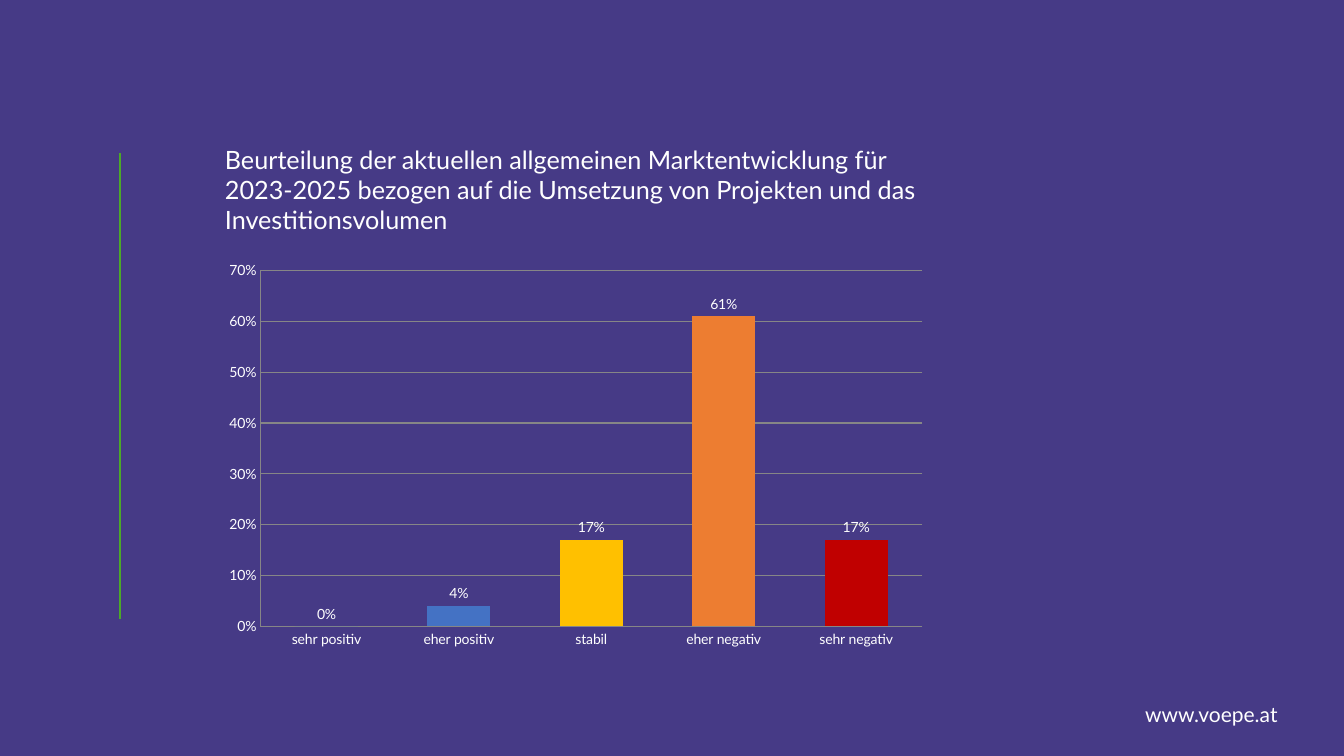
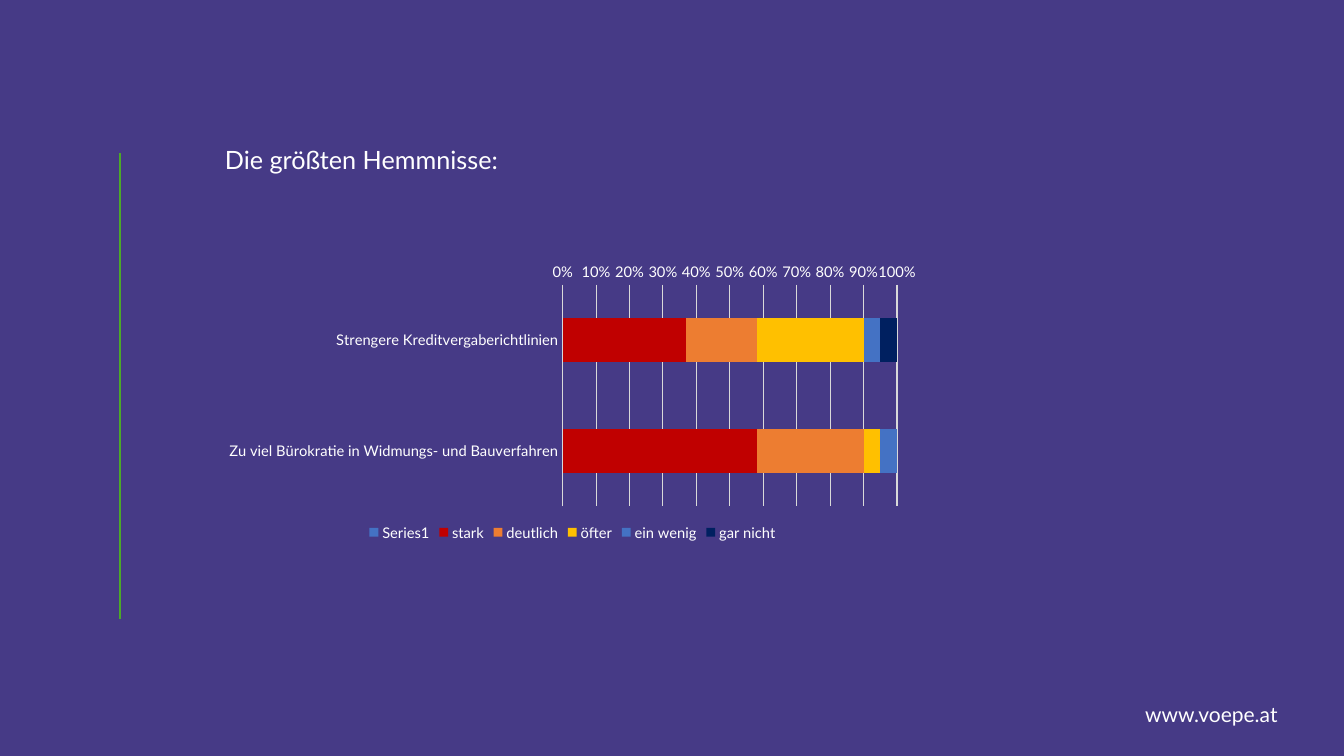
from pptx import Presentation, util as u
from pptx.chart.data import CategoryChartData
from pptx.dml.color import RGBColor
from pptx.enum import chart as ch, shapes, text
from pptx.oxml.ns import qn
from lxml import etree

HUES = {
    "back": "463A86", "text": "FFFFFF", "rule": "4CA928",
    "grid": "868686", "pale": "D9D9D9",
    "blue": "4472C4", "gold": "FFC000", "orange": "ED7D31",
    "red": "C00000", "navy": "002060",
}
FONT = "Lato"
WIDE, HIGH = u.Inches(13.33), u.Inches(7.5)
LEFT, SPAN = 16, 53.7  # content column, in percent of the slide's width


def hue(name):
    return RGBColor.from_string(HUES[name])


def across(share):
    return int(WIDE * share / 100)


def down(share):
    return int(HIGH * share / 100)


def frame(left, top, width, height):
    """Turn percent of the slide into a box in EMU."""
    return across(left), down(top), across(width), down(height)


def paint(fill, name):
    fill.solid()
    fill.fore_color.rgb = hue(name)


def style(font, size):
    font.name = FONT
    font.size = u.Pt(size)
    font.color.rgb = hue("text")


def stroke(line, name, width=0.75):
    line.color.rgb = hue(name)
    line.width = u.Pt(width)


def add_text(slide, words, box, size):
    body = slide.shapes.add_textbox(*frame(*box)).text_frame
    body.word_wrap = True
    body.auto_size = text.MSO_AUTO_SIZE.SHAPE_TO_FIT_TEXT
    body.text = words
    style(body.paragraphs[0].runs[0].font, size)


def add_rule(slide, left, top, base):
    x = across(left)
    rule = slide.shapes.add_connector(
        shapes.MSO_CONNECTOR.STRAIGHT, x, down(top), x, down(base))
    stroke(rule.line, "rule", 1.75)
    props = rule._element.find(qn("p:spPr"))
    etree.SubElement(props, qn("a:effectLst"))


def add_page(deck, title, height):
    """Add a slide with the shared rule, address and title."""
    slide = deck.slides.add_slide(deck.slide_layouts[6])
    add_text(slide, "www.voepe.at", (84.47, 92.13, 13.35, 4.67), 15)
    add_rule(slide, 8.93, 20.27, 81.87)
    add_text(slide, title, (LEFT, 18.4, SPAN, height), 18)
    return slide


def add_chart(slide, kind, box, cats, rows, size, gap, grid):
    """Add a bar chart; each row is a name, a colour and its values."""
    data = CategoryChartData(number_format="0%")
    data.categories = cats
    for name, _, vals in rows:
        data.add_series(name, vals)
    chart = slide.shapes.add_chart(kind, *frame(*box), data).chart
    style(chart.font, size)
    chart.has_title = False
    chart.has_legend = False
    plot = chart.plots[0]
    plot.gap_width = gap
    plot.vary_by_categories = False
    for series, (_, name, _) in zip(plot.series, rows):
        paint(series.format.fill, name)
        series.invert_if_negative = False
    for axis in (chart.category_axis, chart.value_axis):
        axis.major_tick_mark = ch.XL_TICK_MARK.NONE
        axis.minor_tick_mark = ch.XL_TICK_MARK.NONE
        style(axis.tick_labels.font, size)
        stroke(axis.format.line, grid)
    scale = chart.value_axis
    scale.minimum_scale = 0
    scale.major_unit = 0.1
    scale.has_major_gridlines = True
    stroke(scale.major_gridlines.format.line, grid)
    scale.tick_labels.number_format = "0%"
    scale.tick_labels.number_format_is_linked = False
    return chart


def add_market(deck):
    slide = add_page(
        deck,
        "Beurteilung der aktuellen allgemeinen Marktentwicklung für "
        "2023-2025 bezogen auf die Umsetzung von Projekten und das "
        "Investitionsvolumen", 13.47)
    cats = ["sehr positiv", "eher positiv", "stabil",
            "eher negativ", "sehr negativ"]
    rows = [("Series 1", "blue", (0, 0.04, 0.17, 0.61, 0.17))]
    chart = add_chart(slide, ch.XL_CHART_TYPE.COLUMN_CLUSTERED,
                      (LEFT, 33.6, SPAN, 53.07), cats, rows, 10, 110, "grid")
    chart.value_axis.maximum_scale = 0.7
    plot = chart.plots[0]
    for i, name in enumerate(("blue", "gold", "orange", "red"), 1):
        paint(plot.series[0].points[i].format.fill, name)
    plot.has_data_labels = True
    labels = plot.data_labels
    labels.show_value = True
    labels.number_format = "0%"
    labels.number_format_is_linked = False
    labels.position = ch.XL_LABEL_POSITION.OUTSIDE_END
    style(labels.font, 10)


def add_hurdles(deck):
    slide = add_page(deck, "Die größten Hemmnisse:", 5.33)
    cats = ["Strengere Kreditvergaberichtlinien",
            "Zu viel Bürokratie in Widmungs- und Bauverfahren"]
    rows = [
        ("Series1", "blue", (None, None)),
        ("stark", "red", (0.37, 0.58)),
        ("deutlich", "orange", (0.21, 0.32)),
        ("öfter", "gold", (0.32, 0.05)),
        ("ein wenig", "blue", (0.05, 0.05)),
        ("gar nicht", "navy", (0.05, 0)),
    ]
    chart = add_chart(slide, ch.XL_CHART_TYPE.BAR_STACKED,
                      (LEFT, 34, 53.2, 38.13), cats, rows, 10.5, 150, "pale")
    chart.plots[0].overlap = 100
    chart.category_axis.reverse_order = True
    chart.value_axis.maximum_scale = 1
    chart.value_axis.format.line.fill.background()
    chart.has_legend = True
    chart.legend.position = ch.XL_LEGEND_POSITION.BOTTOM
    chart.legend.include_in_layout = False
    style(chart.legend.font, 10.5)


def main():
    deck = Presentation()
    deck.slide_width, deck.slide_height = WIDE, HIGH
    paint(deck.slide_master.background.fill, "back")
    add_market(deck)
    add_hurdles(deck)
    deck.save("out.pptx")


if __name__ == "__main__":
    main()
